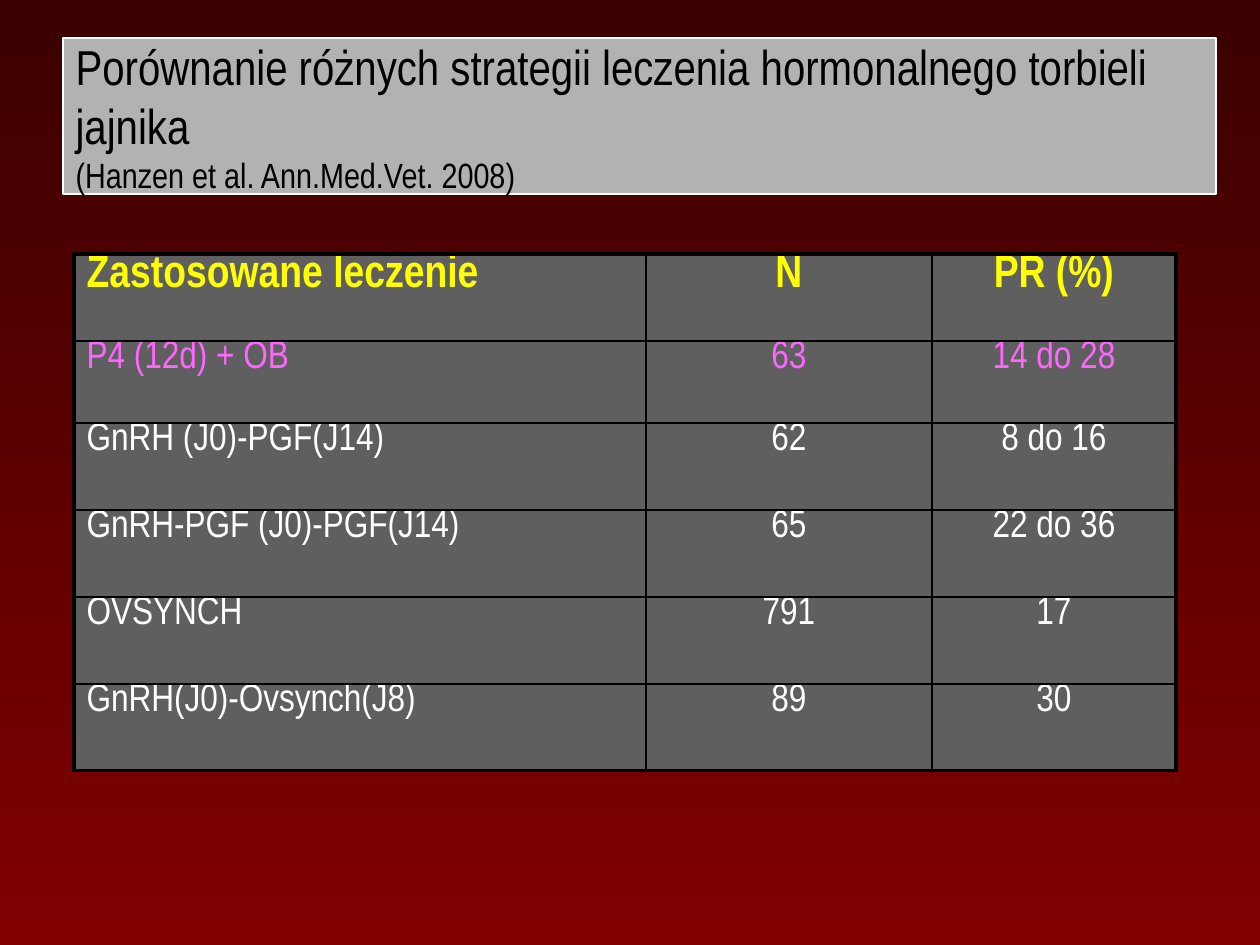
from copy import deepcopy

from lxml.etree import SubElement
from pptx import Presentation
from pptx.dml.color import RGBColor
from pptx.enum.text import MSO_ANCHOR, MSO_AUTO_SIZE, PP_ALIGN
from pptx.oxml.ns import qn
from pptx.util import Emu, Pt

BLACK = RGBColor(0x00, 0x00, 0x00)
WHITE = RGBColor(0xFF, 0xFF, 0xFF)
YELLOW = RGBColor(0xFF, 0xFF, 0x00)
PINK = RGBColor(0xFF, 0x66, 0xFF)
SILVER = RGBColor(0xB2, 0xB2, 0xB2)
GREY = RGBColor(0x5F, 0x5F, 0x5F)
DARK_RED = RGBColor(0x3B, 0x00, 0x00)
RED = RGBColor(0x80, 0x00, 0x00)

FONT = "Arial Narrow"
PX_PER_INCH = 126

TITLE = "Porównanie różnych strategii leczenia hormonalnego torbieli jajnika"
CITATION = "(Hanzen et al. Ann.Med.Vet. 2008)"
TREATMENTS = [
    ("Zastosowane leczenie", "N", "PR (%)"),
    ("P4 (12d) + OB", "63", "14 do 28"),
    ("GnRH (J0)-PGF(J14)", "62", "8 do 16"),
    ("GnRH-PGF (J0)-PGF(J14)", "65", "22 do 36"),
    ("OVSYNCH", "791", "17"),
    ("GnRH(J0)-Ovsynch(J8)", "89", "30"),
]
COLUMN_WIDTHS = [572, 286, 244]
ROW_HEIGHTS = [87, 82, 87, 87, 87, 87]
ROW_FORMATS = [
    dict(size=26, color=YELLOW, bold=True),
    dict(size=22, color=PINK),
] + [dict(size=22, color=WHITE)] * 4


def px(length):
    return Emu(round(length * 914400 / PX_PER_INCH))


def add_text(paragraph, text, size=22, color=BLACK, bold=False, align=PP_ALIGN.LEFT):
    paragraph.alignment = align
    run = paragraph.add_run()
    run.text = text
    run.font.name = FONT
    run.font.size = Pt(size)
    run.font.bold = bold
    run.font.color.rgb = color
    return run


def draw_border(cell, side, width):
    line = SubElement(cell._tc.get_or_add_tcPr(), qn(f"a:ln{side}"), w=str(Pt(width)))
    fill = SubElement(line, qn("a:solidFill"))
    SubElement(fill, qn("a:srgbClr"), val=str(BLACK))


class SlideBuilder:
    outer_border = 2.25
    inner_border = 1

    def __init__(self, presentation):
        self.slide = presentation.slides.add_slide(presentation.slide_layouts[5])

    def background(self, top_color, bottom_color):
        fill = self.slide.background.fill
        fill.gradient()
        fill.gradient_angle = 270
        for stop, color in zip(fill.gradient_stops, (top_color, bottom_color)):
            stop.color.rgb = color

    def title(self, heading, citation, left, top, width, height):
        banner = self.slide.shapes.title
        banner.left, banner.top = px(left), px(top)
        banner.width, banner.height = px(width), px(height)
        banner.fill.solid()
        banner.fill.fore_color.rgb = SILVER
        banner.line.color.rgb = WHITE
        banner.line.width = Pt(0.75)
        frame = banner.text_frame
        frame.word_wrap = True
        frame.auto_size = MSO_AUTO_SIZE.NONE
        frame.vertical_anchor = MSO_ANCHOR.MIDDLE
        paragraph = frame.paragraphs[0]
        heading_run = add_text(paragraph, heading, size=28)
        paragraph.add_line_break()
        paragraph._p[-1].append(deepcopy(heading_run._r.rPr))
        add_text(paragraph, citation, size=20)

    def table(self, rows, left, top, widths, heights, formats):
        table = self.slide.shapes.add_table(
            len(rows), len(widths), px(left), px(top), px(sum(widths)), px(sum(heights))
        ).table
        table.first_row = table.horz_banding = False
        for column, width in zip(table.columns, widths):
            column.width = px(width)
        for row, height in zip(table.rows, heights):
            row.height = px(height)
        for r, (values, row_format) in enumerate(zip(rows, formats)):
            for c, value in enumerate(values):
                cell = table.cell(r, c)
                outer_sides = {
                    "L": c == 0,
                    "R": c == len(widths) - 1,
                    "T": r == 0,
                    "B": r == len(rows) - 1,
                }
                for side, is_outer in outer_sides.items():
                    draw_border(cell, side, self.outer_border if is_outer else self.inner_border)
                cell.fill.solid()
                cell.fill.fore_color.rgb = GREY
                cell.margin_top = 0
                align = PP_ALIGN.CENTER if c else PP_ALIGN.LEFT
                add_text(cell.text_frame.paragraphs[0], value, align=align, **row_format)


def main():
    presentation = Presentation()
    presentation.slide_width, presentation.slide_height = px(1260), px(945)
    builder = SlideBuilder(presentation)
    builder.background(DARK_RED, RED)
    builder.title(TITLE, CITATION, 63, 38, 1153, 156)
    builder.table(TREATMENTS, 74, 254, COLUMN_WIDTHS, ROW_HEIGHTS, ROW_FORMATS)
    presentation.save("out.pptx")


if __name__ == "__main__":
    main()
